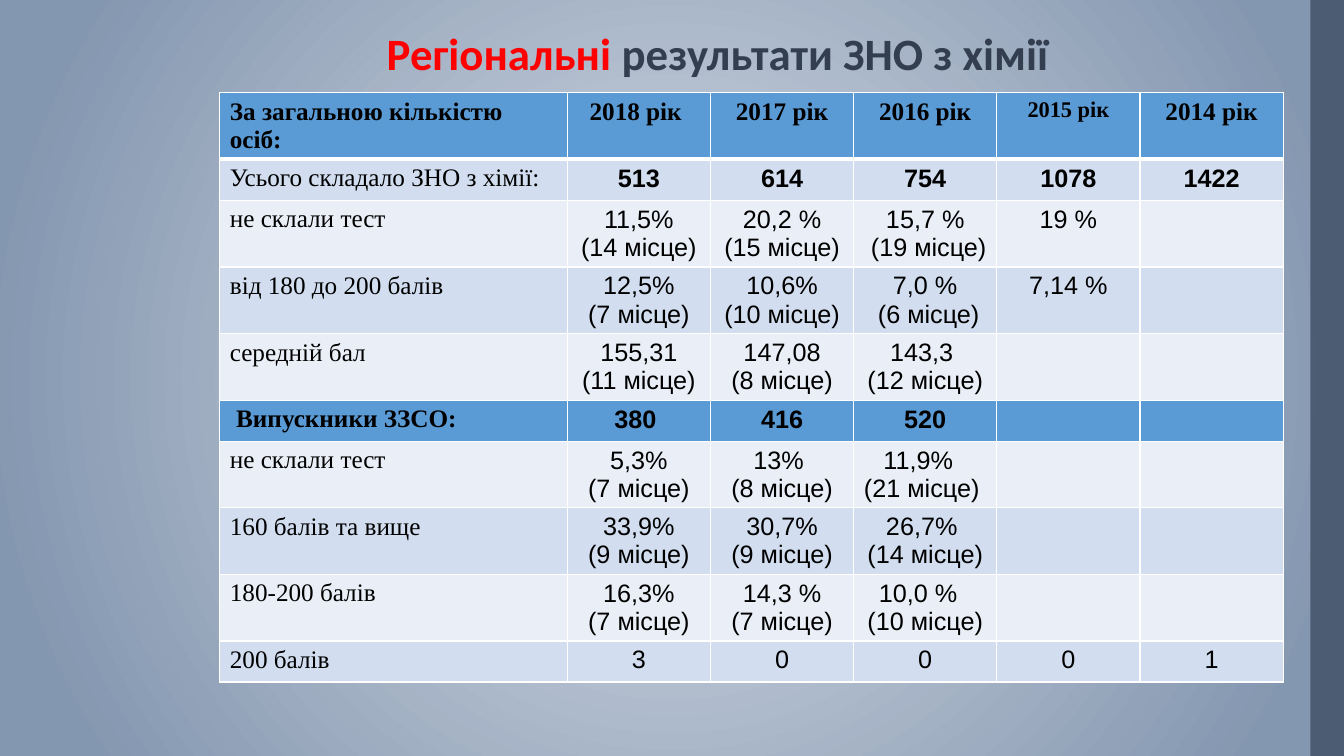
from dataclasses import dataclass

from pptx import Presentation
from pptx.dml.color import RGBColor
from pptx.enum.shapes import MSO_SHAPE
from pptx.enum.text import MSO_ANCHOR, PP_ALIGN
from pptx.oxml import parse_xml
from pptx.oxml.ns import nsdecls, qn
from pptx.util import Pt


@dataclass(frozen=True)
class Theme:
    glow: str = "D6DCE5"
    backdrop: str = "8497B0"
    strip: str = "44546A"
    accent: str = "FF0000"
    title: str = "333F50"
    ink: str = "000000"
    grid: str = "FFFFFF"
    heading: str = "5B9BD5"
    bands: tuple = ("EAEFF7", "D2DEEF")
    title_font: str = "Calibri"
    label_font: str = "Times New Roman"
    value_font: str = "Arial"
    title_size: int = 32
    body_size: int = 18
    small_size: int = 16


theme = Theme()


def write(paragraph, text, *, font, size=theme.body_size, color=theme.ink,
          bold=False, align=PP_ALIGN.LEFT):
    paragraph.alignment = align
    run = paragraph.add_run()
    run.text = text
    run.font.name = font
    run.font.size = Pt(size)
    run.font.bold = bold
    run.font.color.rgb = RGBColor.from_string(color)


def draw_borders(cell, **widths):
    """Give the cell white borders; widths maps lnL, lnR, lnT, lnB to points."""
    properties = cell._tc.get_or_add_tcPr()
    for position, (side, width) in enumerate(widths.items()):
        properties.insert(position, parse_xml(
            f'<a:{side} {nsdecls("a")} w="{Pt(width)}"><a:solidFill>'
            f'<a:srgbClr val="{theme.grid}"/></a:solidFill></a:{side}>'))


prs = Presentation()
prs.slide_width, prs.slide_height = Pt(960), Pt(540)
slide = prs.slides.add_slide(prs.slide_layouts[6])

# Background glow
backdrop = slide.background.fill
backdrop.gradient()
for stop, position, color in zip(backdrop.gradient_stops, (0, 0.9),
                                 (theme.glow, theme.backdrop)):
    stop.position = position
    stop.color.rgb = RGBColor.from_string(color)
gradient = next(slide.element.iter(qn("a:gradFill")))
gradient.replace(gradient.find(qn("a:lin")), parse_xml(
    f'<a:path {nsdecls("a")} path="circle">'
    '<a:fillToRect l="50000" t="50000" r="50000" b="50000"/></a:path>'))

# Right-hand strip
strip = slide.shapes.add_shape(MSO_SHAPE.RECTANGLE, Pt(936), Pt(0), Pt(24), Pt(540))
strip.shadow.inherit = False
strip.line.fill.background()
strip.fill.solid()
strip.fill.fore_color.rgb = RGBColor.from_string(theme.strip)
strip_color = next(strip.element.spPr.iter(qn("a:srgbClr")))
strip_color.append(parse_xml(f'<a:alpha {nsdecls("a")} val="87000"/>'))

# Results table: a line break inside a value starts a new paragraph
HEADER, GRADUATES = 0, 5
results = [
    ["За загальною кількістю осіб:", "2018 рік ", "2017 рік", "2016 рік", "2015 рік", "2014 рік"],
    ["Усього складало ЗНО з хімії:", "513", "614", "754", "1078", "1422"],
    ["не склали тест", "11,5%\n(14 місце)", "20,2 %\n(15 місце)", "15,7 %\n (19 місце)", "19 %", ""],
    ["від 180 до 200 балів", "12,5%\n(7 місце)", "10,6%\n(10 місце)", "7,0 %\n (6 місце)", "7,14 %", ""],
    ["середній бал", "155,31\n(11 місце)", "147,08\n(8 місце)", "143,3 \n(12 місце)", "", ""],
    [" Випускники ЗЗСО:", "380 ", "416", "520", "", ""],
    ["не склали тест", "5,3%\n(7 місце)", "13% \n(8 місце)", "11,9%  \n(21 місце) ", "", ""],
    ["160 балів та вище", "33,9%\n(9 місце)", "30,7%\n(9 місце)", "26,7% \n(14 місце)", "", ""],
    ["180-200 балів", "16,3%\n(7 місце)", "14,3 %\n(7 місце)", "10,0 %  \n(10 місце)", "", ""],
    ["200 балів", "3", "0", "0", "0", "1"],
]
column_widths = [248.2] + [102.3] * 5
row_heights = [47.6 if r == HEADER or "\n" in row[1] else 29.3
               for r, row in enumerate(results)]
table = slide.shapes.add_table(len(results), len(column_widths), Pt(157), Pt(66.2),
                               Pt(sum(column_widths)), Pt(sum(row_heights))).table
table.first_row = True
table.horz_banding = False
for column, width in zip(table.columns, column_widths):
    column.width = Pt(width)
for row, height in zip(table.rows, row_heights):
    row.height = Pt(height)

for r, row in enumerate(results):
    is_heading = r in (HEADER, GRADUATES)
    for c, value in enumerate(row):
        cell = table.cell(r, c)
        cell.fill.solid()
        cell.fill.fore_color.rgb = RGBColor.from_string(
            theme.heading if is_heading else theme.bands[r % 2])
        draw_borders(cell, lnL=1, lnR=1, lnT=3 if r == HEADER + 1 else 1,
                     lnB=3 if r == HEADER else 1)
        for n, line in enumerate(value.split("\n") if value else []):
            frame = cell.text_frame
            write(frame.add_paragraph() if n else frame.paragraphs[0], line,
                  font=theme.label_font if r == HEADER or c == 0 else theme.value_font,
                  size=theme.small_size if line == "2015 рік" else theme.body_size,
                  bold=is_heading or (r == 1 and c > 0),
                  align=PP_ALIGN.CENTER if c else PP_ALIGN.LEFT)

# Title
title = slide.shapes.add_textbox(Pt(252.7), Pt(15.1), Pt(527), Pt(45.4)).text_frame
title.word_wrap = True
title.vertical_anchor = MSO_ANCHOR.BOTTOM
title.paragraphs[0].line_spacing = 0.9
for text, color in (("Регіональні", theme.accent),
                    (" результати ЗНО з хімії ", theme.title)):
    write(title.paragraphs[0], text, font=theme.title_font, size=theme.title_size,
          color=color, bold=True, align=PP_ALIGN.CENTER)

prs.save("out.pptx")
